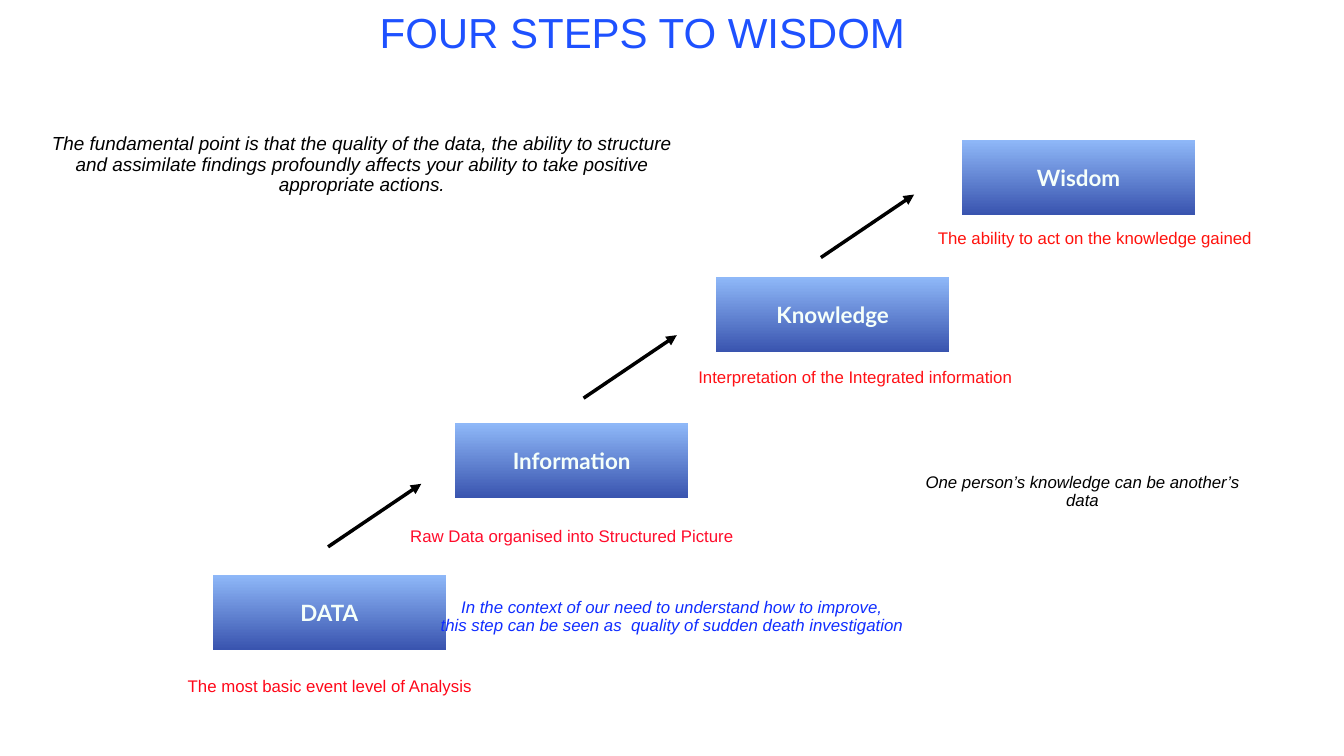
"""Build the Four Steps to Wisdom slide."""
import lxml.etree
import pptx
import pptx.dml.color
import pptx.enum.shapes
import pptx.enum.text
import pptx.oxml.ns
import pptx.util

RGBColor = pptx.dml.color.RGBColor
BLACK = RGBColor(0x00, 0x00, 0x00)
MINT = RGBColor(0xF5, 0xFF, 0xFA)
SKY = RGBColor(0x8F, 0xB8, 0xF8)
NAVY = RGBColor(0x39, 0x54, 0xAF)
TITLE_BLUE = RGBColor(0x1E, 0x51, 0xFF)
NOTE_BLUE = RGBColor(0x10, 0x2D, 0xFF)
RED_DATA = RGBColor(0xFF, 0x07, 0x19)
RED_INFORMATION = RGBColor(0xFF, 0x0C, 0x2B)
RED_KNOWLEDGE = RGBColor(0xFF, 0x11, 0x16)
RED_WISDOM = RGBColor(0xFF, 0x12, 0x0D)

EMU_PER_PX = 9144
STEP_W, STEP_H = 463, 149
ARROW_W, ARROW_H = 185, 125

STEPS = [
    ("DATA", 422, 1140),
    ("Information", 903, 840),
    ("Knowledge", 1421, 550),
    ("Wisdom", 1909, 277),
]
ARROWS = [(651, 1085), (1158, 790), (1629, 511)]
CAPTIONS = [
    ("The most basic event level of Analysis", 343, 1333, 622, RED_DATA),
    ("Raw Data organised into Structured Picture", 773, 1035, 723, RED_INFORMATION),
    ("Interpretation of the Integrated information", 1329, 720, 736, RED_KNOWLEDGE),
    ("The ability to act on the knowledge gained", 1821, 444, 703, RED_WISDOM),
]
INTRO = (
    "The fundamental point is that the quality of the data, the ability to structure\n"
    "and assimilate findings profoundly affects your ability to take positive\n"
    "appropriate actions."
)
CONTEXT = (
    "In the context of our need to understand how to improve,\n"
    "this step can be seen as  quality of sudden death investigation"
)


def px(n):
    """Convert px to EMU."""
    return pptx.util.Emu(n * EMU_PER_PX)


class Deck:
    """Hold the style and the current slide."""

    font = "Arial"
    label_font = "Lato"
    margin = 6

    def __init__(self, width, height):
        """Open a presentation with one title-only slide."""
        self.prs = pptx.Presentation()
        self.prs.slide_width, self.prs.slide_height = px(width), px(height)
        self.slide = self.prs.slides.add_slide(self.prs.slide_layouts[5])

    def set_text(self, s, text, size, color, font, spacing=0.9, bold=False, italic=False, wrap=False):
        """Fill a shape with centred text."""
        tf = s.text_frame
        tf.text = text
        tf.word_wrap = wrap
        tf.vertical_anchor = pptx.enum.text.MSO_ANCHOR.MIDDLE
        tf.margin_left = tf.margin_right = tf.margin_top = tf.margin_bottom = px(self.margin)
        for p in tf.paragraphs:
            p.alignment = pptx.enum.text.PP_ALIGN.CENTER
            p.line_spacing = spacing
            for r in p.runs:
                r.font.name, r.font.size = font, pptx.util.Pt(size)
                r.font.bold, r.font.italic = bold, italic
                r.font.color.rgb = color

    def title(self, text, x, y, w, h):
        """Place the slide title."""
        s = self.slide.shapes.title
        s.left, s.top, s.width, s.height = px(x), px(y), px(w), px(h)
        self.set_text(s, text, 60, TITLE_BLUE, self.font)
        s.text_frame.auto_size = pptx.enum.text.MSO_AUTO_SIZE.SHAPE_TO_FIT_TEXT

    def text(self, text, x, y, w, h, color, size=24, italic=False, wrap=False):
        """Add a text box that grows with its text."""
        s = self.slide.shapes.add_textbox(px(x), px(y), px(w), px(h))
        self.set_text(s, text, size, color, self.font, italic=italic, wrap=wrap)
        s.text_frame.auto_size = pptx.enum.text.MSO_AUTO_SIZE.SHAPE_TO_FIT_TEXT

    def step(self, name, x, y):
        """Add a gradient box with its label."""
        kind = pptx.enum.shapes.MSO_SHAPE.RECTANGLE
        s = self.slide.shapes.add_shape(kind, px(x), px(y), px(STEP_W), px(STEP_H))
        s.shadow.inherit = False
        s.line.fill.background()
        s.fill.gradient()
        s.fill.gradient_angle = 270
        for stop, color in zip(s.fill.gradient_stops, (SKY, NAVY)):
            stop.color.rgb = color
        self.set_text(s, name, 32, MINT, self.label_font, spacing=1.0, bold=True, wrap=True)

    def arrow(self, x, y):
        """Add an arrow rising to the right."""
        kind = pptx.enum.shapes.MSO_CONNECTOR.STRAIGHT
        s = self.slide.shapes.add_connector(kind, px(x), px(y), px(x + ARROW_W), px(y - ARROW_H))
        s.line.color.rgb = BLACK
        s.line.width = pptx.util.Pt(5)
        qn = pptx.oxml.ns.qn
        sp = s.element.spPr
        lxml.etree.SubElement(sp.find(qn("a:ln")), qn("a:tailEnd"), type="triangle")
        lxml.etree.SubElement(sp, qn("a:effectLst"))


def main():
    """Compose and save the slide."""
    deck = Deck(2667, 1500)
    for step in STEPS:
        deck.step(*step)
    for arrow in ARROWS:
        deck.arrow(*arrow)
    deck.title("FOUR STEPS TO WISDOM", 717, 1, 1116, 137)
    for text, x, y, w, color in CAPTIONS:
        deck.text(text, x, y, w, 61, color)
    deck.text("One person’s knowledge can be another’s data", 1826, 934, 644, 85, BLACK,
              italic=True, wrap=True)
    deck.text(INTRO, 68, 245, 1300, 166, BLACK, size=27, italic=True)
    deck.text(CONTEXT, 690, 1172, 1286, 106, NOTE_BLUE, italic=True, wrap=True)
    deck.prs.save("out.pptx")


if __name__ == "__main__":
    main()
